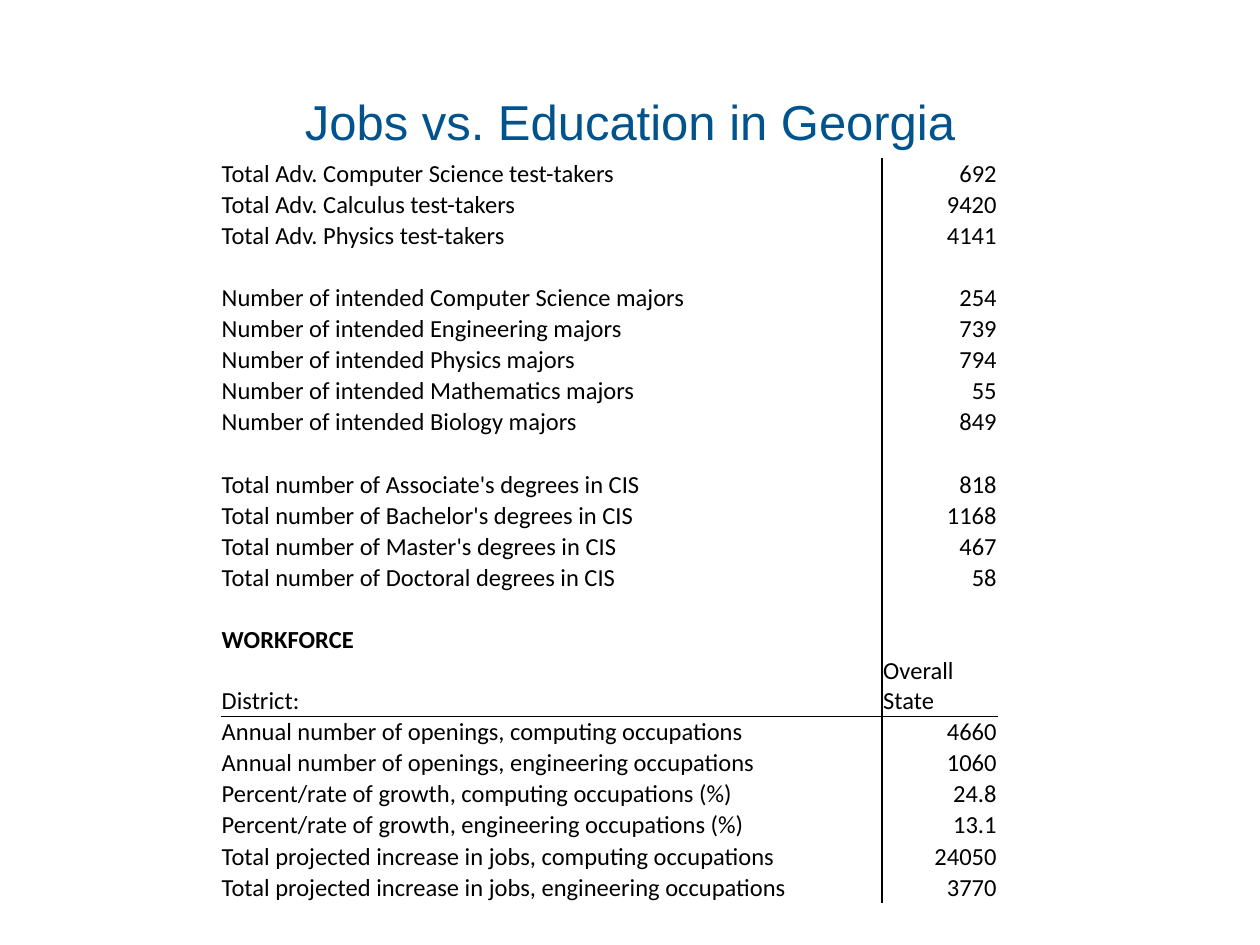
from lxml import etree
from pptx import Presentation
from pptx import util as u
from pptx.dml import color
from pptx.enum import text
from pptx.oxml import ns

COLORS = {"title": "00538D", "ink": "000000"}
ROWS = [
    ("Total Adv. Computer Science test-takers", "692"),
    ("Total Adv. Calculus test-takers", "9420"),
    ("Total Adv. Physics test-takers", "4141"),
    ("", ""),
    ("Number of intended Computer Science majors", "254"),
    ("Number of intended Engineering majors", "739"),
    ("Number of intended Physics majors", "794"),
    ("Number of intended Mathematics majors", "55"),
    ("Number of intended Biology majors", "849"),
    ("", ""),
    ("Total number of Associate's degrees in CIS", "818"),
    ("Total number of Bachelor's degrees in CIS", "1168"),
    ("Total number of Master's degrees in CIS", "467"),
    ("Total number of Doctoral degrees in CIS", "58"),
    ("", ""),
    ("WORKFORCE", ""),
    ("District:", "Overall State"),
    ("Annual number of openings, computing occupations", "4660"),
    ("Annual number of openings, engineering occupations", "1060"),
    ("Percent/rate of growth, computing occupations (%)", "24.8"),
    ("Percent/rate of growth, engineering occupations (%)", "13.1"),
    ("Total projected increase in jobs, computing occupations", "24050"),
    ("Total projected increase in jobs, engineering occupations", "3770"),
]
HEADER = [label for label, value in ROWS].index("District:")
ROW_HEIGHT = 15.84
COLUMN_WIDTHS = (378, 66.24)
CELL_FORMAT = {
    "margin_left": u.Pt(0.72),
    "margin_right": u.Pt(0.72),
    "margin_top": u.Pt(0.72),
    "margin_bottom": 0,
    "vertical_anchor": text.MSO_ANCHOR.BOTTOM,
}


def format_font(font, name, size, hue, bold=False):
    for key, value in {"name": name, "size": u.Pt(size), "bold": bold}.items():
        setattr(font, key, value)
    font.color.rgb = color.RGBColor.from_string(COLORS[hue])


def set_borders(cell, widths):
    for side in "LRTB":
        line = etree.SubElement(cell._tc.get_or_add_tcPr(), ns.qn(f"a:ln{side}"))
        if side in widths:
            line.set("w", str(u.Pt(widths[side])))
            fill = etree.SubElement(line, ns.qn("a:solidFill"))
            etree.SubElement(fill, ns.qn("a:srgbClr"), val=COLORS["ink"])
        else:
            etree.SubElement(line, ns.qn("a:noFill"))


deck = Presentation()
deck.slide_width, deck.slide_height = u.Pt(720), u.Pt(540)
page = deck.slides.add_slide(deck.slide_layouts[5])

title = page.shapes.title
title.left, title.top, title.width, title.height = map(u.Pt, (54, 48, 612, 42))
title.text_frame.text = "Jobs vs. Education in Georgia"
title.text_frame.vertical_anchor = text.MSO_ANCHOR.MIDDLE
para = title.text_frame.paragraphs[0]
para.alignment = text.PP_ALIGN.CENTER
format_font(para.runs[0].font, "Arial", 28, "title")

frame = page.shapes.add_table(
    len(ROWS), 2, u.Pt(126), u.Pt(90), u.Pt(sum(COLUMN_WIDTHS)), u.Pt(ROW_HEIGHT * len(ROWS))
)
table = frame.table
table.first_row = table.horz_banding = False
for column, width in zip(table.columns, COLUMN_WIDTHS):
    column.width = u.Pt(width)

for row_index, entries in enumerate(ROWS):
    table.rows[row_index].height = u.Pt(ROW_HEIGHT)
    for column_index, entry in enumerate(entries):
        cell = table.cell(row_index, column_index)
        for key, value in CELL_FORMAT.items():
            setattr(cell, key, value)
        borders = {"L" if column_index else "R": 1.5}
        if row_index == HEADER:
            borders["B"] = 0.5
        elif row_index == HEADER + 1:
            borders["T"] = 0.5
        set_borders(cell, borders)
        cell.fill.background()
        para = cell.text_frame.paragraphs[0]
        if column_index and row_index != HEADER:
            para.alignment = text.PP_ALIGN.RIGHT
        if entry:
            span = para.add_run()
            span.text = entry
            format_font(span.font, "Calibri", 14, "ink", entry == "WORKFORCE")
        else:
            etree.SubElement(para._p, ns.qn("a:endParaRPr"), sz="1400")

deck.save("out.pptx")
